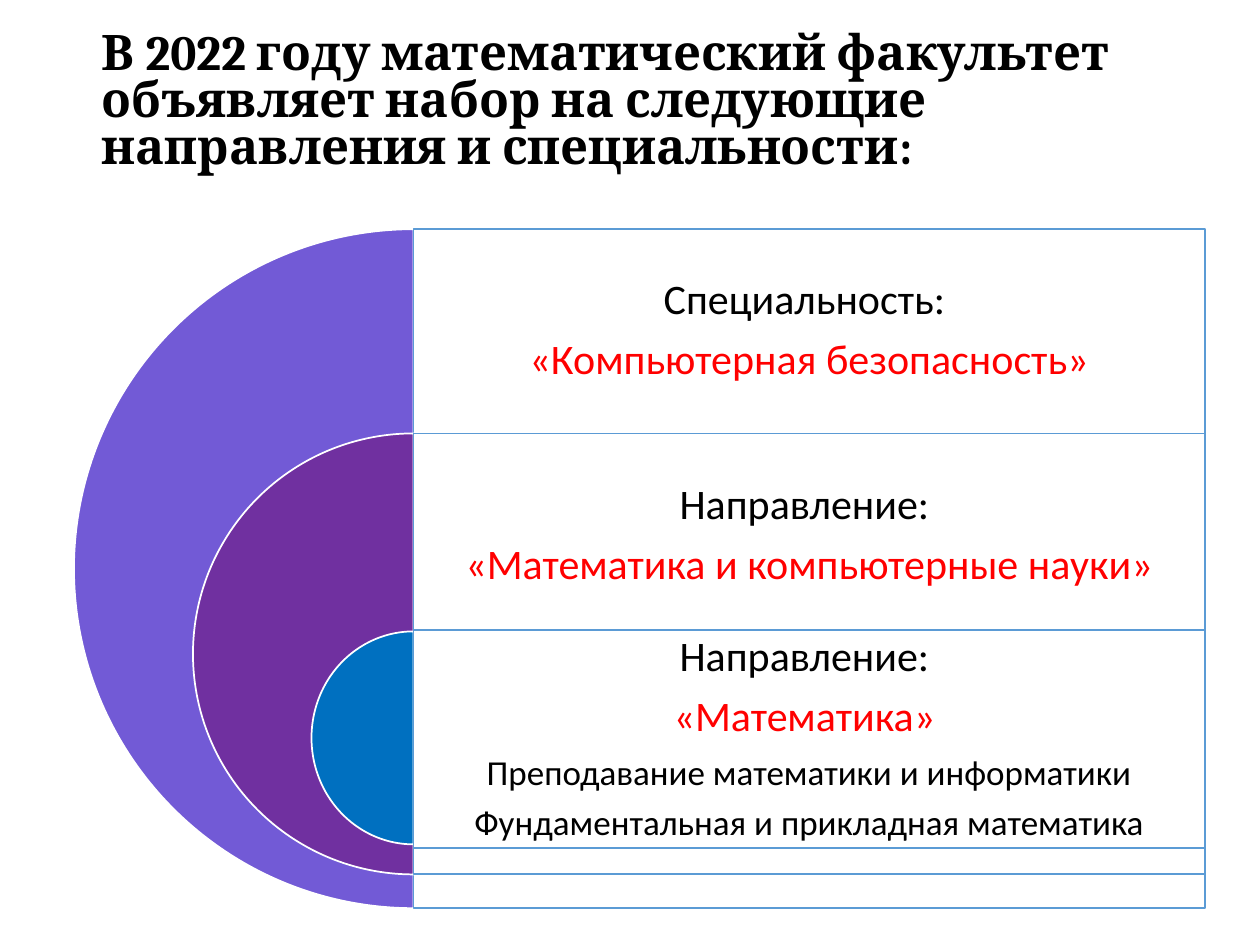
from dataclasses import dataclass

import pptx
import pptx.dml.color
import pptx.enum.shapes
import pptx.enum.text
import pptx.oxml
import pptx.oxml.ns
import pptx.util

Pt = pptx.util.Pt
SHAPE = pptx.enum.shapes.MSO_SHAPE
ANCHOR = pptx.enum.text.MSO_ANCHOR
ALIGN = pptx.enum.text.PP_ALIGN

AXIS = 236.3  # shared centre of the half discs and left edge of the panels
WIDTH = 452.2
BLACK, RED, WHITE, BLUE = "000000", "FF0000", "FFFFFF", "5B9BD5"


@dataclass
class Line:
    text: str
    color: str = BLACK
    size: float = 24


@dataclass
class Level:
    color: str
    disc: tuple[float, float, float]  # top, width, height
    panel: tuple[float, float]  # top, height
    room: float  # height left for the text
    lines: list[Line]


LEVELS = [
    Level("725AD6", (131, 388, 388), (131, 388), 116.6, [
        Line("Специальность: "),
        Line("«Компьютерная безопасность»", RED)]),
    Level("7030A0", (247.7, 252, 252), (247.7, 252), 116.6, [
        Line("Направление: "),
        Line("«Математика и компьютерные науки»", RED)]),
    Level("0070C0", (360.8, 116.6, 121.7), (360, 124.6), 124.6, [
        Line("Направление: "),
        Line("«Математика» ", RED),
        Line("Преподавание математики и информатики", size=20),
        Line("Фундаментальная и прикладная математика", size=20)]),
]


def paint(target, color: str) -> None:
    target.rgb = pptx.dml.color.RGBColor.from_string(color)


def draw(slide, kind, x: float, y: float, w: float, h: float, fill: str, edge: str):
    shape = slide.shapes.add_shape(kind, Pt(x), Pt(y), Pt(w), Pt(h))
    shape.shadow.inherit = False
    shape.fill.solid()
    paint(shape.fill.fore_color, fill)
    paint(shape.line.color, edge)
    shape.line.width = Pt(1)
    return shape


def fade(shape, percent: int) -> None:
    """Set the opacity of a solid fill."""
    tone = shape.fill._xPr.find(".//" + pptx.oxml.ns.qn("a:srgbClr"))
    alpha = pptx.oxml.parse_xml(
        f'<a:alpha {pptx.oxml.ns.nsdecls("a")} val="{percent * 1000}"/>')
    tone.append(alpha)


def style(par, size: float, font: str, color: str, bold: bool = False) -> None:
    for run in par.runs:
        run.font.size = Pt(size)
        run.font.name = font
        run.font.bold = bold
        paint(run.font.color, color)


def write(slide, top: float, height: float, lines: list[Line]) -> None:
    box = slide.shapes.add_textbox(Pt(AXIS), Pt(top), Pt(WIDTH), Pt(height))
    frame = box.text_frame
    frame.word_wrap = True
    frame.vertical_anchor = ANCHOR.MIDDLE
    frame.margin_left = frame.margin_right = Pt(7.2)
    frame.margin_top = frame.margin_bottom = Pt(7.2)
    frame.text = "\n".join(line.text for line in lines)
    for par, line in zip(frame.paragraphs, lines):
        par.alignment = ALIGN.CENTER
        par.line_spacing = 0.9
        par.space_after = Pt(0.35 * line.size)
        style(par, line.size, "Calibri", line.color)


def build(slide, level: Level) -> None:
    top, w, h = level.disc
    pie = draw(slide, SHAPE.PIE, AXIS - w / 2, top, w, h, level.color, WHITE)
    pie.adjustments[0], pie.adjustments[1] = 54, 162
    top, h = level.panel
    panel = draw(slide, SHAPE.RECTANGLE, AXIS, top, WIDTH, h, WHITE, BLUE)
    fade(panel, 90)
    write(slide, top, level.room, level.lines)


def head(slide, text: str) -> None:
    """Use the body placeholder for the heading and drop the title one."""
    title = slide.shapes.title._element
    title.getparent().remove(title)
    body = slide.placeholders[1]
    body.left, body.top, body.width, body.height = Pt(51), Pt(15), Pt(620), Pt(96.5)
    frame = body.text_frame
    frame.text = text
    frame.word_wrap = True
    frame.auto_size = pptx.enum.text.MSO_AUTO_SIZE.NONE
    frame.vertical_anchor = ANCHOR.TOP
    par = frame.paragraphs[0]
    par.alignment = ALIGN.LEFT
    par.line_spacing = 0.8
    par.space_before = Pt(0)
    style(par, 28, "Cambria", BLACK, True)


def main() -> None:
    deck = pptx.Presentation()
    deck.slide_width, deck.slide_height = Pt(720), Pt(540)
    slide = deck.slides.add_slide(deck.slide_layouts[2])
    head(slide, "В 2022 году математический факультет объявляет набор "
                "на следующие направления и специальности:")
    for level in LEVELS:
        build(slide, level)
    deck.save("out.pptx")


if __name__ == "__main__":
    main()
